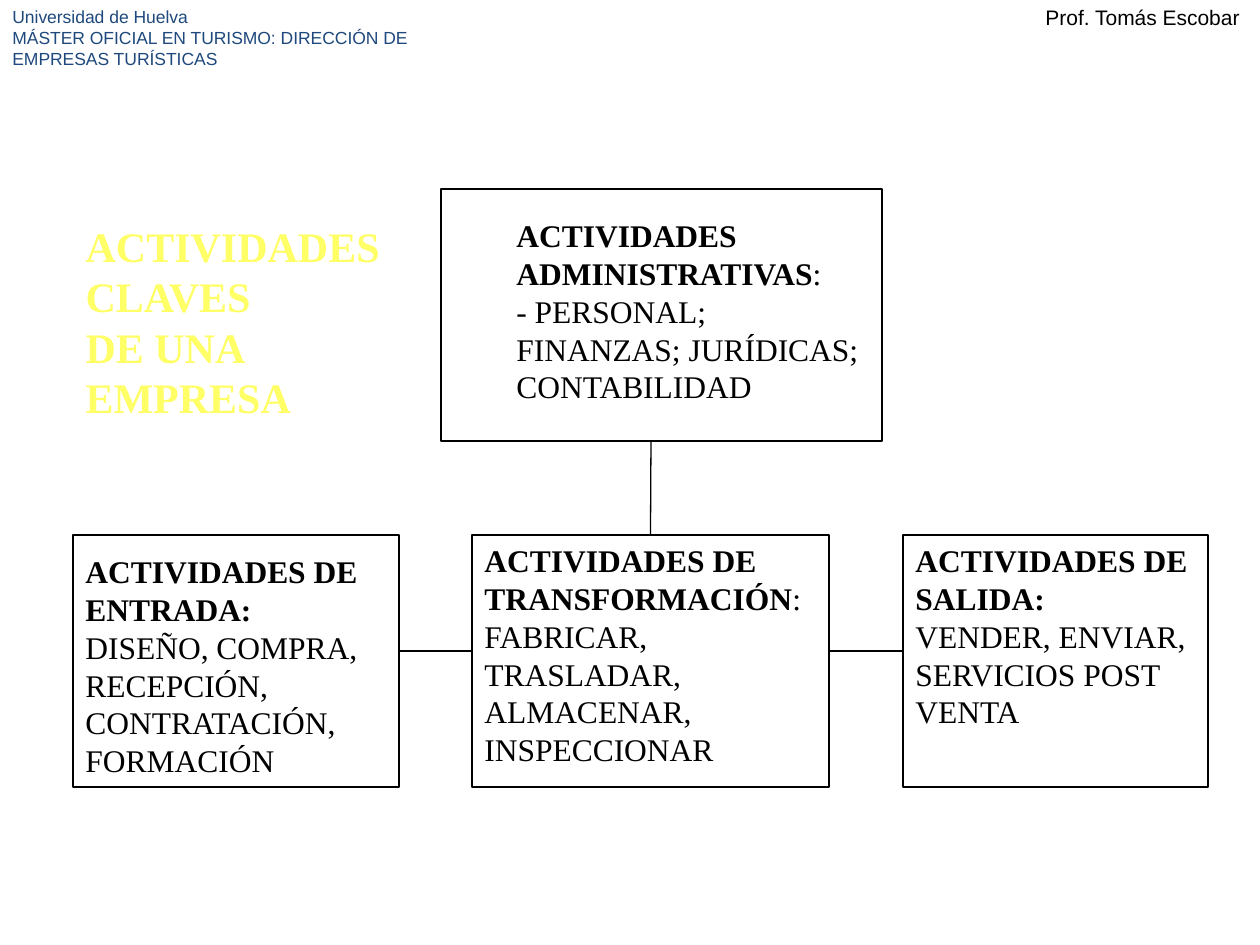
from dataclasses import dataclass

from lxml import etree
from pptx import Presentation
from pptx.dml.color import RGBColor
from pptx.enum.shapes import MSO_CONNECTOR, MSO_SHAPE
from pptx.enum.text import MSO_ANCHOR, MSO_AUTO_SIZE, PP_ALIGN
from pptx.oxml.ns import qn
from pptx.util import Pt

RECTANGLE = MSO_SHAPE.RECTANGLE
STRAIGHT = MSO_CONNECTOR.STRAIGHT
TOP, LEFT, NO_FIT = MSO_ANCHOR.TOP, PP_ALIGN.LEFT, MSO_AUTO_SIZE.NONE
PX = 914400 / 126


@dataclass
class Theme:
    black: RGBColor = RGBColor(0, 0, 0)
    navy: RGBColor = RGBColor(0x1F, 0x49, 0x7D)
    yellow: RGBColor = RGBColor(0xFF, 0xFF, 0x66)
    serif: str = "Times New Roman"
    sans: str = "Arial"
    title: int = 24
    body: int = 18
    author: int = 12
    course: int = 10
    line: float = 0.75


theme = Theme()


def scale(*lengths):
    return [round(length * PX) for length in lengths]


def write(box, paragraphs, font, size, color, wrap=True):
    """Fill a box; each paragraph is a (bold text, plain text) pair."""
    frame = box.text_frame
    frame.word_wrap = wrap
    frame.auto_size = NO_FIT
    frame.vertical_anchor = TOP
    for index, (strong, plain) in enumerate(paragraphs):
        para = frame.add_paragraph() if index else frame.paragraphs[0]
        para.alignment = LEFT
        para.font.name, para.font.size = font, Pt(size)
        para.font.color.rgb = color
        para.font.bold = not plain
        for text, bold in ((strong, True), (plain, False)):
            if text:
                span = para.add_run()
                span.text = text
                if strong and plain:
                    span.font.bold = bold


deck = Presentation()
deck.slide_width, deck.slide_height = scale(1260, 945)
page = deck.slides.add_slide(deck.slide_layouts[5])

# Header: author and course
author = page.shapes.add_textbox(*scale(1033, -2, 223, 38))
write(author, [("", "Prof. Tomás Escobar")], theme.sans, theme.author, theme.black, wrap=False)
course = page.shapes.add_textbox(*scale(0, 0, 427, 110))
write(course, [("", "Universidad de Huelva"),
               ("", "MÁSTER OFICIAL EN TURISMO: DIRECCIÓN DE EMPRESAS TURÍSTICAS")],
      theme.sans, theme.course, theme.navy)

# Title
title = page.shapes.title
title.left, title.top, title.width, title.height = scale(73, 214, 325, 214)
write(title, [("ACTIVIDADES CLAVES", ""), ("DE UNA EMPRESA", "")],
      theme.serif, theme.title, theme.yellow)

# Activities: frame, text area, wrapping, paragraphs
activities = {
    "administration": ((441, 189, 441, 252), (504, 210, 378, 202), True, [
        ("ACTIVIDADES ADMINISTRATIVAS", ":"),
        ("", "- PERSONAL;"),
        ("", "FINANZAS; JURÍDICAS; CONTABILIDAD")]),
    "input": ((73, 535, 326, 252), (73, 546, 305, 333), False, [
        ("ACTIVIDADES DE", ""), ("ENTRADA:", ""),
        ("", "DISEÑO, COMPRA,"), ("", "RECEPCIÓN,"),
        ("", "CONTRATACIÓN,"), ("", "FORMACIÓN")]),
    "transformation": ((472, 535, 357, 252), (472, 535, 343, 277), False, [
        ("ACTIVIDADES DE", ""), ("TRANSFORMACIÓN", ":"),
        ("", "FABRICAR,"), ("", "TRASLADAR,"),
        ("", "ALMACENAR,"), ("", "INSPECCIONAR")]),
    "output": ((903, 535, 305, 252), (903, 535, 318, 239), True, [
        ("ACTIVIDADES DE SALIDA:", ""),
        ("", "VENDER, ENVIAR, SERVICIOS POST VENTA")]),
}
frames = {}
for name, (outline, area, wrap, paragraphs) in activities.items():
    frame = page.shapes.add_shape(RECTANGLE, *scale(*outline))
    frame.shadow.inherit = False
    frame.fill.background()
    frame.line.color.rgb = theme.black
    frame.line.width = Pt(theme.line)
    frames[name] = frame
    box = page.shapes.add_textbox(*scale(*area))
    write(box, paragraphs, theme.serif, theme.body, theme.black, wrap)

# Links between the activities
links = []
for ends in ((651, 441, 651, 535), (399, 651, 472, 651), (829, 651, 903, 651)):
    link = page.shapes.add_connector(STRAIGHT, *scale(*ends))
    link.line.color.rgb = theme.black
    link.line.width = Pt(theme.line)
    etree.SubElement(link._element.spPr, qn("a:effectLst"))
    links.append(link)
links[0].end_connect(frames["transformation"], 0)

deck.save("out.pptx")
